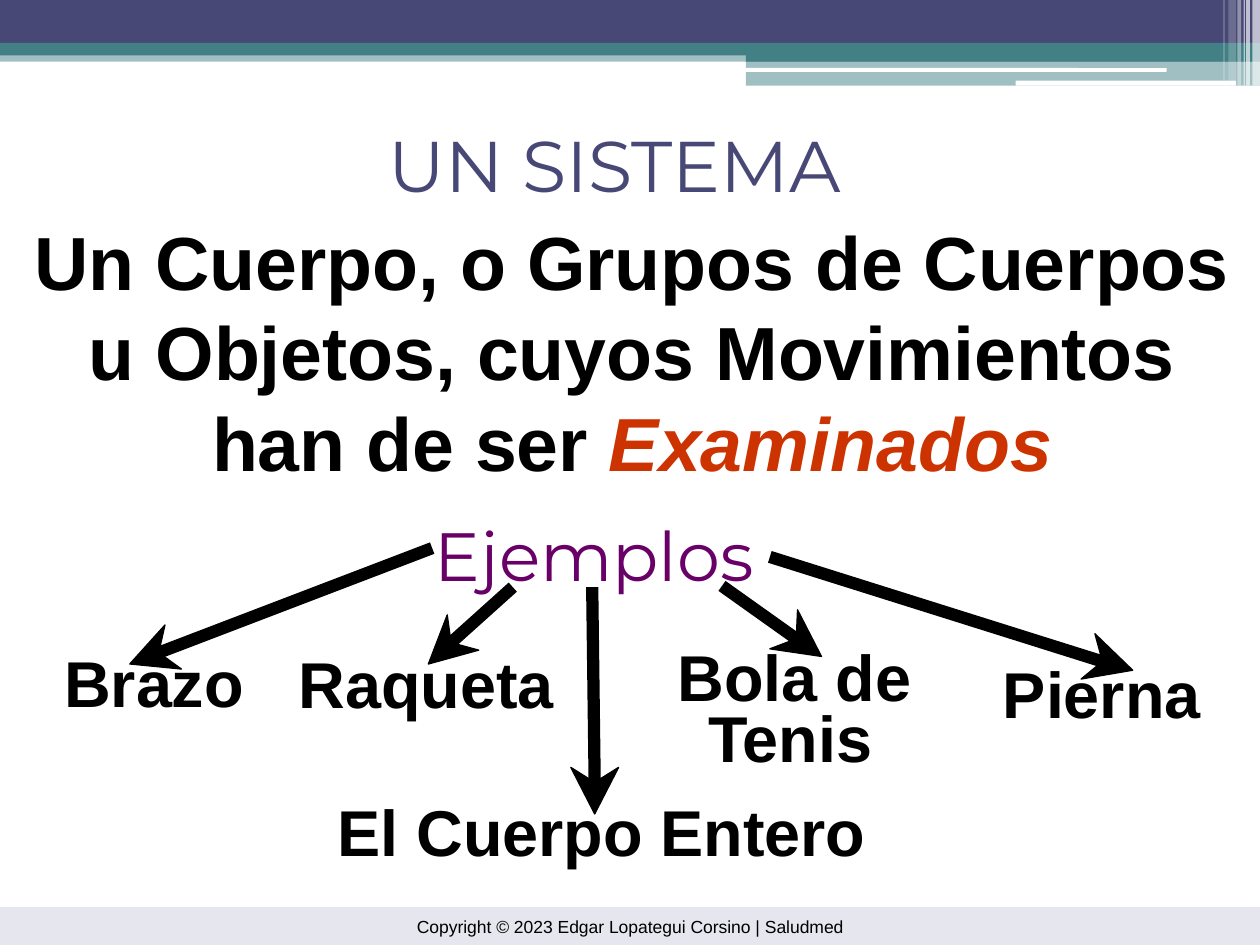
import math
from dataclasses import dataclass

from lxml import etree
from pptx import Presentation
from pptx import util as u
from pptx.dml.color import RGBColor
from pptx.enum import shapes, text
from pptx.oxml.ns import qn

PX = 9144  # EMU per px, 100 px to the inch


@dataclass(frozen=True)
class Theme:
    indigo: str = "484876"
    teal: str = "438086"
    white: str = "FFFFFF"
    black: str = "000000"
    pale: str = "E6E6EF"
    purple: str = "680068"
    red: str = "CC3300"
    body_font: str = "Arial"
    display_font: str = "Montserrat"
    title: int = 41
    definition: int = 43
    heading: int = 39
    label: int = 37
    footer: int = 10
    leading: float = 1.2
    shaft: int = 7
    outline: float = 0.75


THEME = Theme()


def add_span(para, words, *, size, color=THEME.black, font=THEME.body_font,
             bold=False, italic=False):
    span = para.add_run()
    span.text = words
    span.font.size = u.Pt(size)
    span.font.name = font
    span.font.color.rgb = RGBColor.from_string(color)
    span.font.bold = bold
    span.font.italic = italic


class SlideBuilder:
    def __init__(self, page, theme):
        self.page = page
        self.theme = theme

    def title(self, words, left, top, width, height):
        box = self.page.shapes.title
        box.left, box.top, box.width, box.height = (
            n * PX for n in (left, top, width, height))
        frame = box.text_frame
        frame.auto_size = text.MSO_AUTO_SIZE.NONE
        frame.vertical_anchor = text.MSO_ANCHOR.MIDDLE
        para = frame.paragraphs[0]
        para.alignment = text.PP_ALIGN.CENTER
        para.line_spacing = 1.1
        add_span(para, words, size=self.theme.title,
                 color=self.theme.indigo, font=self.theme.display_font)

    def band(self, left, top, width, height, color, opacity=100, rounded=False):
        kind = shapes.MSO_SHAPE.ROUNDED_RECTANGLE if rounded else shapes.MSO_SHAPE.RECTANGLE
        band = self.page.shapes.add_shape(
            kind, left * PX, top * PX, width * PX, height * PX)
        band.shadow.inherit = False
        band.line.fill.background()
        band.fill.solid()
        band.fill.fore_color.rgb = RGBColor.from_string(color)
        if opacity < 100:
            tint = band.fill._xPr.find(".//" + qn("a:srgbClr"))
            etree.SubElement(tint, qn("a:alpha"), val=str(opacity * 1000))
        return band

    def footer(self, words, top, height):
        band = self.band(0, top, 1000, height, self.theme.pale)
        band.text_frame.vertical_anchor = text.MSO_ANCHOR.MIDDLE
        para = band.text_frame.paragraphs[0]
        para.alignment = text.PP_ALIGN.CENTER
        add_span(para, words, size=self.theme.footer)

    def text(self, lines, left, top, width, height, *, size, centered=False, **look):
        """Each line is a list of (words, format overrides) spans."""
        box = self.page.shapes.add_textbox(
            left * PX, top * PX, width * PX, height * PX)
        frame = box.text_frame
        frame.word_wrap = False
        frame.auto_size = text.MSO_AUTO_SIZE.SHAPE_TO_FIT_TEXT
        frame.margin_left = frame.margin_right = 0
        frame.margin_top = frame.margin_bottom = 0
        for index, line in enumerate(lines):
            para = frame.add_paragraph() if index else frame.paragraphs[0]
            para.alignment = text.PP_ALIGN.CENTER if centered else text.PP_ALIGN.LEFT
            para.line_spacing = u.Pt(size * self.theme.leading)
            for words, extra in line:
                add_span(para, words, size=size, **{**look, **extra})

    def arrow(self, start, tip):
        """Thick shaft with a swept-back head whose point is at tip."""
        length = math.dist(start, tip)
        dx, dy = ((b - a) / length for a, b in zip(start, tip))

        def behind(back, side=0):
            return (round(tip[0] - back * dx - side * dy),
                    round(tip[1] - back * dy + side * dx))

        notch = behind(25)
        black = RGBColor.from_string(self.theme.black)
        shaft = self.page.shapes.add_connector(
            shapes.MSO_CONNECTOR.STRAIGHT, *(n * PX for n in (*start, *notch)))
        shaft.line.width = u.Pt(self.theme.shaft)
        shaft.line.color.rgb = black
        etree.SubElement(shaft.line._ln.getparent(), qn("a:effectLst"))

        outline = self.page.shapes.build_freeform(*tip, scale=PX)
        outline.add_line_segments([behind(37, 19), notch, behind(37, -19)], close=True)
        head = outline.convert_to_shape()
        head.shadow.inherit = False
        head.fill.solid()
        head.fill.fore_color.rgb = black
        head.line.color.rgb = black
        head.line.width = u.Pt(self.theme.outline)


def main():
    deck = Presentation()
    deck.slide_width, deck.slide_height = 1000 * PX, 750 * PX
    page = deck.slides.add_slide(deck.slide_layouts[5])
    slide = SlideBuilder(page, THEME)

    slide.band(0, 40, 1000, 9, THEME.teal, 50)
    slide.band(0, 0, 1000, 34, THEME.indigo)
    slide.band(0, 34, 1000, 10, THEME.teal)
    slide.band(592, 39, 408, 10, THEME.teal)
    slide.band(592, 48, 408, 20, THEME.teal, 50)
    slide.band(591, 54, 335, 3, THEME.white, rounded=True)
    slide.band(806, 64, 175, 4, THEME.white, rounded=True)
    stripes = [(994, 6, 68, 65), (989, 3, 68, 65), (987, 1, 68, 60),
               (982, 3, 68, 40), (975, 6, 64, 20), (971, 1, 64, 30)]
    for left, width, height, opacity in stripes:
        slide.band(left, 0, width, height, THEME.white, opacity)
    slide.footer("Copyright © 2023 Edgar Lopategui Corsino | Saludmed", 720, 30)

    slide.title("UN SISTEMA", 177, 107, 622, 39)
    slide.text([[("Un Cuerpo, o Grupos de Cuerpos", {})],
                [("u Objetos, cuyos Movimientos", {})],
                [("han de ser ", {}),
                 ("Examinados", {"color": THEME.red, "italic": True})]],
               27, 171, 949, 215, size=THEME.definition, centered=True, bold=True)
    slide.text([[("Ejemplos", {})]], 345, 407, 271, 65, size=THEME.heading,
               color=THEME.purple, font=THEME.display_font)

    arrows = [((343, 435), (103, 527)), ((407, 466), (340, 527)),
              ((573, 465), (652, 521)), ((611, 442), (899, 532)),
              ((470, 466), (472, 646))]
    for start, tip in arrows:
        slide.arrow(start, tip)

    examples = [("Brazo", 51, 510, 143), ("Raqueta", 237, 511, 203),
                ("Pierna", 796, 519, 157), ("El Cuerpo Entero", 268, 628, 420),
                ("Bola de", 538, 505, 186), ("Tenis", 562, 554, 134)]
    for words, left, top, width in examples:
        slide.text([[(words, {})]], left, top, width, 62, size=THEME.label, bold=True)

    deck.save("out.pptx")


if __name__ == "__main__":
    main()
